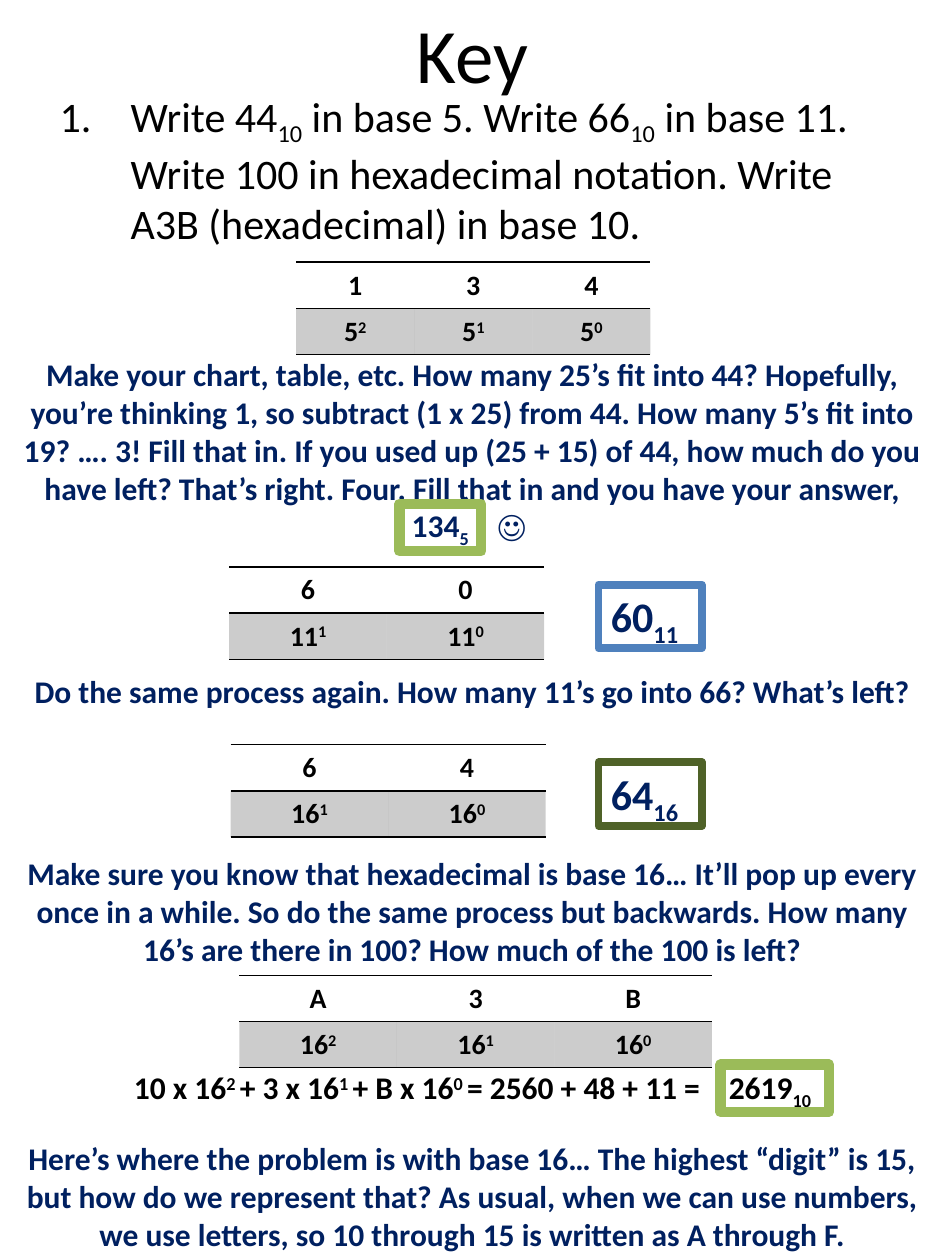
from lxml import etree
from pptx import Presentation
from pptx.dml.color import RGBColor
from pptx.enum.shapes import MSO_SHAPE
from pptx.enum.text import MSO_ANCHOR, PP_ALIGN
from pptx.oxml.ns import qn
from pptx.util import Pt

RECT = MSO_SHAPE.RECTANGLE
LEFT, CENTER = PP_ALIGN.LEFT, PP_ALIGN.CENTER
TOP, MIDDLE = MSO_ANCHOR.TOP, MSO_ANCHOR.MIDDLE

COLORS = {"black": "000000", "navy": "002060", "white": "FFFFFF",
          "green": "9BBB59", "blue": "4F81BD", "olive": "4F6228"}
FONT = "Calibri"
W, H = 540, 720
NO_STYLE = "{2D5ABB26-0587-4C30-8999-92F81FD0307C}"

# A run that starts with _ is a subscript, with ^ a superscript.
# A (text, points) pair is a run with extra letter spacing.
TITLE = ["Key"]
QUESTION = ["Write 44", "_10", " in base 5. Write 66", "_10",
            " in base 11. Write 100 in hexadecimal notation. "
            "Write A3B (hexadecimal) in base 10."]
EQUATION = ["10 x 16", "^2 ", "+ 3 x 16", "^1 ", "+ B x 16", "^0 ",
            "= 2560 + 48 + 11 =", (" ", 12.2), "2619", "_10"]

# top, height, colour, runs
NOTES = [
    (199.4, 116.6, "navy", [
        "Make your chart, table, etc. How many 25’s fit into 44? Hopefully, you’re "
        "thinking 1, so subtract (1 x 25) from 44. How many 5’s fit into 19? …. 3! "
        "Fill that in. If you used up (25 + 15) of 44, how much do you have left? "
        "That’s right. Four. Fill that in and you have your answer, 134",
        "_5", (" ", 12.2), "☺ "]),
    (380.2, 28.8, "navy", [
        "Do the same process again. How many 11’s go into 66? What’s left?"]),
    (484.6, 72.7, "navy", [
        "Make sure you know that hexadecimal is base 16… It’ll pop up every once in "
        "a while. So do the same process but backwards. How many 16’s are there in "
        "100? How much of the 100 is left?"]),
    (607, 28.8, "black", EQUATION),
    (647.3, 72.7, "navy", [
        "Here’s where the problem is with base 16… The highest “digit” is 15, but "
        "how do we represent that? As usual, when we can use numbers, we use "
        "letters, so 10 through 15 is written as A through F."]),
]
# left, top, column width, base, digits
PLACE_VALUES = [
    (169.2, 149.8, 67.5, 5, "134"),
    (131, 324, 90, 11, "60"),
    (131.8, 425.5, 90, 16, "64"),
    (136.8, 557.3, 90, 16, "A3B"),
]
ROW_HEIGHT = 26.3
# top, line colour, runs
ANSWERS = [(334.1, "blue", ["60", "_11"]), (435.6, "olive", ["64", "_16"])]
# left, top, width
FRAMES = [(228.2, 288, 46.8), (411.8, 608.4, 61.9)]


def rgb(name):
    return RGBColor.from_string(COLORS[name])


def write(tf, runs, size, color="black", bold=False, align=CENTER):
    """Fill the first paragraph of a text frame with marked-up runs."""
    p = tf.paragraphs[0]
    p.alignment = align
    for item in runs:
        text, spacing = item if isinstance(item, tuple) else (item, 0)
        baseline = {"_": -25000, "^": 30000}.get(text[0])
        r = p.add_run()
        r.text = text[1:] if baseline else text
        r.font.name, r.font.size, r.font.bold = FONT, Pt(size), bold
        r.font.color.rgb = rgb(color)
        r_pr = r.font._element
        if baseline:
            r_pr.set("baseline", str(baseline))
        if spacing:
            r_pr.set("spc", str(round(spacing * 100)))
    return p


def add_text(s, box, runs, size, anchor=TOP, **style):
    tf = s.shapes.add_textbox(*map(Pt, box)).text_frame
    tf.word_wrap = True
    tf.vertical_anchor = anchor
    return write(tf, runs, size, **style)


def number(p, indent):
    p.space_before = Pt(4.8)
    p_pr = p._p.get_or_add_pPr()
    p_pr.set("marL", str(Pt(indent)))
    p_pr.set("indent", str(-Pt(indent)))
    etree.SubElement(p_pr, qn("a:buFont"), typeface="+mj-lt")
    etree.SubElement(p_pr, qn("a:buAutoNum"), type="arabicPeriod")


def rule_cell(cell):
    """Draw 1 pt black lines above and below a cell, none at its sides."""
    tc_pr = cell._tc.get_or_add_tcPr()
    for side in "LRTB":
        ln = etree.SubElement(tc_pr, qn("a:ln" + side), w=str(Pt(1)))
        if side in "LR":
            etree.SubElement(ln, qn("a:noFill"))
        else:
            fill = etree.SubElement(ln, qn("a:solidFill"))
            etree.SubElement(fill, qn("a:srgbClr"), val=COLORS["black"])


def shade(cell, percent):
    cell.fill.solid()
    cell.fill.fore_color.rgb = rgb("black")
    clr = cell._tc.tcPr.find(qn("a:solidFill")).find(qn("a:srgbClr"))
    etree.SubElement(clr, qn("a:alpha"), val=str(percent * 1000))


def add_place_values(s, left, top, col_width, base, digits):
    n = len(digits)
    box = (left, top, col_width * n, ROW_HEIGHT * 2)
    table = s.shapes.add_table(2, n, *map(Pt, box)).table
    table.first_row = table.horz_banding = False
    table._tbl.tblPr.find(qn("a:tableStyleId")).text = NO_STYLE
    for col, digit in enumerate(digits):
        power = [str(base), f"^{n - 1 - col}"]
        for row, runs in enumerate([[digit], power]):
            cell = table.cell(row, col)
            rule_cell(cell)
            if row:
                shade(cell, 20)
            else:
                cell.fill.background()
            write(cell.text_frame, runs, 16, bold=True)


def add_frame(s, box, color, width, filled=False):
    sp = s.shapes.add_shape(RECT, *map(Pt, box))
    sp.shadow.inherit = False
    sp.line.color.rgb = rgb(color)
    sp.line.width = Pt(width)
    if filled:
        sp.fill.solid()
        sp.fill.fore_color.rgb = rgb("white")
    else:
        sp.fill.background()
    return sp


def main():
    prs = Presentation()
    prs.slide_width, prs.slide_height = Pt(W), Pt(H)
    s = prs.slides.add_slide(prs.slide_layouts[6])

    add_text(s, (27, -30, 486, 120), TITLE, 44, anchor=MIDDLE)
    number(add_text(s, (27, 48, 486, 558), QUESTION, 24, align=LEFT), 40.5)
    for place_values in PLACE_VALUES:
        add_place_values(s, *place_values)
    for top, height, color, runs in NOTES:
        add_text(s, (0, top, W, height), runs, 18, color=color, bold=True)
    for top, color, runs in ANSWERS:
        tf = add_frame(s, (342, top, 59, 36.3), color, 4.5, filled=True).text_frame
        tf.word_wrap = False
        tf.vertical_anchor = TOP
        write(tf, runs, 24, color="navy", bold=True, align=LEFT)
    for left, top, width in FRAMES:
        add_frame(s, (left, top, width, 27), "green", 6)

    prs.save("out.pptx")


if __name__ == "__main__":
    main()
